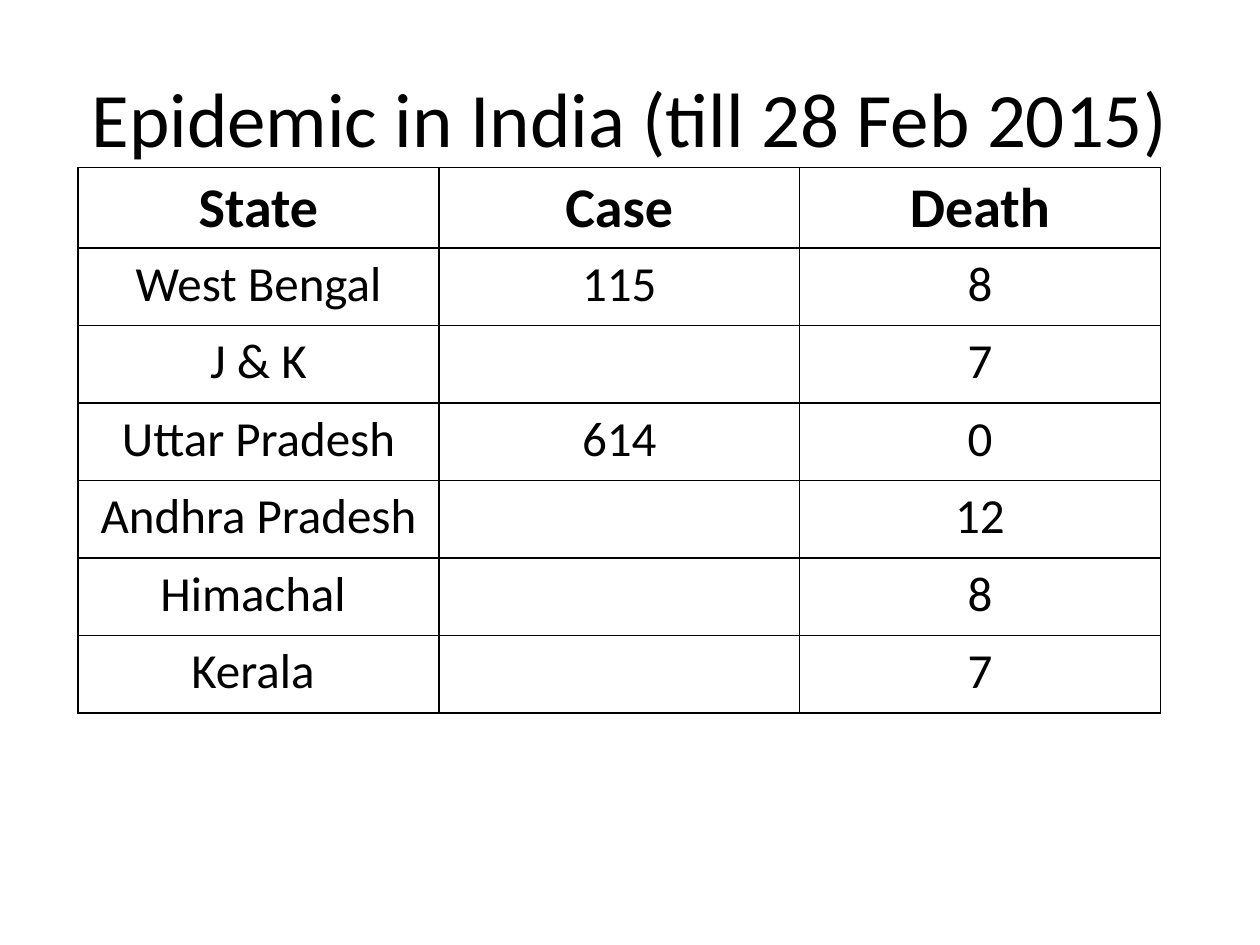
import dataclasses

import pptx
import pptx.dml.color
import pptx.enum.text
import pptx.oxml
import pptx.oxml.ns
import pptx.util
from pptx.util import Inches


@dataclasses.dataclass(frozen=True)
class Theme:
    font: str = "Calibri"
    ink: str = "000000"
    paper: str = "FFFFFF"
    title_size: int = 44
    header_size: int = 32
    body_size: int = 28
    border_width: float = 1


THEME = Theme()

TITLE = "Epidemic in India (till 28 Feb 2015)"
HEADINGS = ("State", "Case", "Death")
STATES = (
    ("West Bengal", "115", "8"),
    ("J & K", "", "7"),
    ("Uttar Pradesh", "614", "0"),
    ("Andhra Pradesh", "", "12"),
    ("Himachal ", "", "8"),
    ("Kerala ", "", "7"),
)


def write(frame, text, *, size, bold=False):
    paragraph = frame.paragraphs[0]
    paragraph.alignment = pptx.enum.text.PP_ALIGN.CENTER
    if not text:
        paragraph.font.size = pptx.util.Pt(size)
        return
    run = paragraph.add_run()
    run.text = text
    run.font.name = THEME.font
    run.font.size = pptx.util.Pt(size)
    run.font.bold = bold
    run.font.color.rgb = pptx.dml.color.RGBColor.from_string(THEME.ink)


def add_title(slide):
    title = slide.shapes.add_textbox(Inches(0.5), Inches(0.3), Inches(9), Inches(1.25))
    title.text_frame.word_wrap = True
    title.text_frame.vertical_anchor = pptx.enum.text.MSO_ANCHOR.MIDDLE
    write(title.text_frame, TITLE, size=THEME.title_size)


def style_cell(cell):
    cell.fill.solid()
    cell.fill.fore_color.rgb = pptx.dml.color.RGBColor.from_string(THEME.paper)
    properties = cell._tc.get_or_add_tcPr()
    namespace = pptx.oxml.ns.nsdecls("a")
    width = pptx.util.Pt(THEME.border_width)
    for position, side in enumerate(("lnL", "lnR", "lnT", "lnB")):
        border = pptx.oxml.parse_xml(
            f'<a:{side} {namespace} w="{width}"><a:solidFill>'
            f'<a:srgbClr val="{THEME.ink}"/></a:solidFill></a:{side}>'
        )
        properties.insert(position, border)


def add_state_table(slide):
    records = (HEADINGS, *STATES)
    table = slide.shapes.add_table(
        len(records), len(HEADINGS), Inches(0.62), Inches(1.33), Inches(8.59), Inches(4.33)
    ).table
    table.first_row = False
    table.horz_banding = False
    for row_index, record in enumerate(records):
        is_header = row_index == 0
        size = THEME.header_size if is_header else THEME.body_size
        table.rows[row_index].height = Inches(0.64 if is_header else 0.615)
        for column_index, value in enumerate(record):
            cell = table.cell(row_index, column_index)
            style_cell(cell)
            write(cell.text_frame, value, size=size, bold=is_header)


def main():
    deck = pptx.Presentation()
    deck.slide_width = Inches(10)
    deck.slide_height = Inches(7.5)
    slide = deck.slides.add_slide(deck.slide_layouts[6])
    add_title(slide)
    add_state_table(slide)
    deck.save("out.pptx")


if __name__ == "__main__":
    main()
